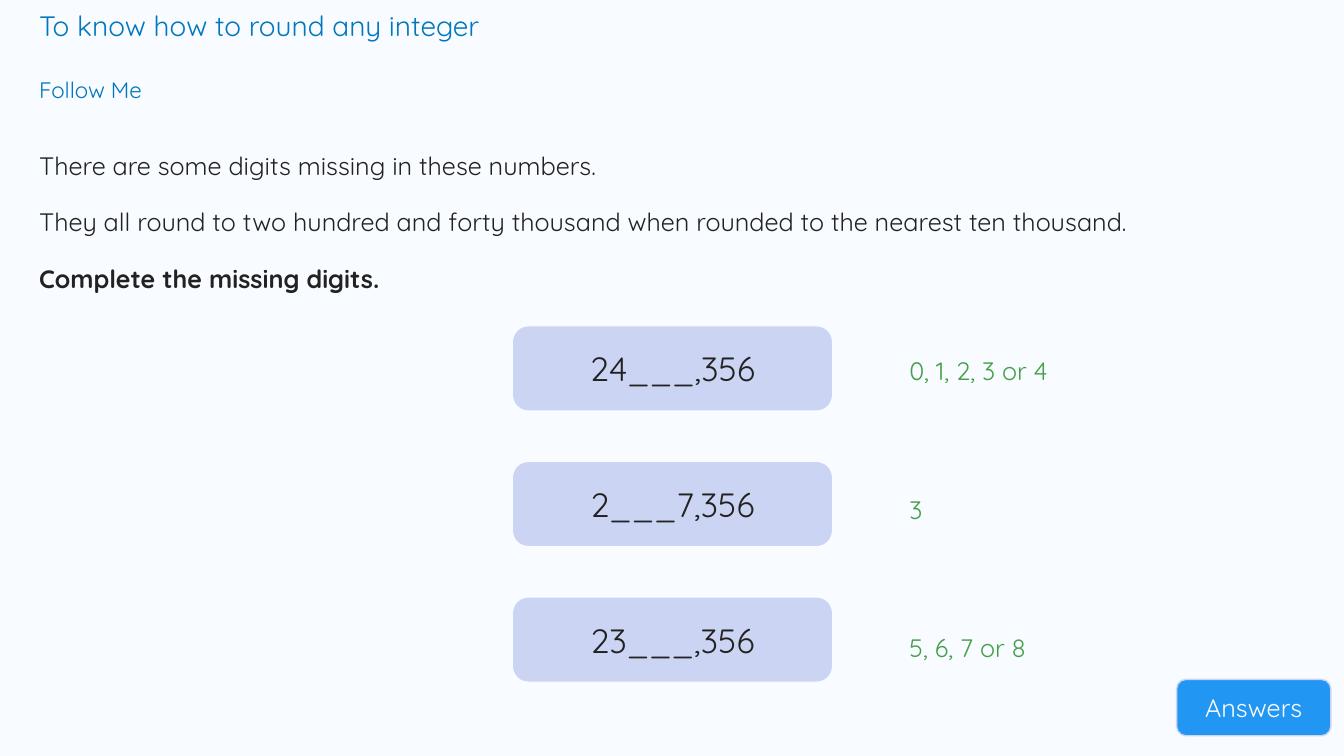
from pptx import Presentation
from pptx.dml.color import RGBColor
from pptx.enum import shapes, text
from pptx.util import Inches, Pt

BACKGROUND = RGBColor(0xF8, 0xFB, 0xFF)
HEADING = RGBColor(0x02, 0x77, 0xBD)
INK = RGBColor(0x22, 0x22, 0x22)
ANSWER = RGBColor(0x43, 0xA0, 0x47)
LAVENDER = RGBColor(0xCC, 0xD4, 0xF4)
BUTTON = RGBColor(0x21, 0x96, 0xF3)
WHITE = RGBColor(0xFF, 0xFF, 0xFF)

deck = Presentation()
deck.slide_width, deck.slide_height = Inches(13.33), Inches(7.5)
page = deck.slides.add_slide(deck.slide_layouts[6])
page.background.fill.solid()
page.background.fill.fore_color.rgb = BACKGROUND


def write(box, lines, size, color, spacing=None):
    frame = box.text_frame
    frame.word_wrap = True
    frame.text = "\n".join(lines)
    for para in frame.paragraphs:
        para.font.name = "Quicksand"
        para.font.size = Pt(size)
        para.font.color.rgb = color
        para.line_spacing = spacing
    return frame


def add_card(left, top, width, height, label, size, color, fill, border):
    card = page.shapes.add_shape(
        shapes.MSO_SHAPE.ROUNDED_RECTANGLE,
        Inches(left), Inches(top), Inches(width), Inches(height))
    card.shadow.inherit = False
    card.fill.solid()
    card.fill.fore_color.rgb = fill
    card.line.color.rgb = LAVENDER
    card.line.width = Pt(border)
    frame = write(card, [label], size, color)
    frame.vertical_anchor = text.MSO_ANCHOR.MIDDLE
    frame.paragraphs[0].alignment = text.PP_ALIGN.CENTER


title = page.shapes.add_textbox(Inches(0.29), Inches(0.04), Inches(12.34), Inches(0.44))
write(title, ["To know how to round any integer"], 20, HEADING)

subtitle = page.shapes.add_textbox(Inches(0.29), Inches(0.71), Inches(2.97), Inches(0.46))
write(subtitle, ["Follow Me"], 16, HEADING)

task = page.shapes.add_textbox(Inches(0.29), Inches(1.29), Inches(12.84), Inches(1.97))
task_lines = write(task, [
    "There are some digits missing in these numbers.",
    "They all round to two hundred and forty thousand when rounded to the nearest ten thousand.",
    "Complete the missing digits.",
], 18, INK, 1.5).paragraphs
for para in task_lines[1:]:
    para.space_before = Pt(8)
task_lines[-1].font.bold = True

questions = [
    ("24___,356", "0, 1, 2, 3 or 4"),
    ("2___7,356", "3"),
    ("23___,356", "5, 6, 7 or 8"),
]
for row, (number, digits) in enumerate(questions):
    add_card(5.11, 3.26 + 1.345 * row, 3.12, 0.79, number, 24, INK, LAVENDER, 3)
    answer = page.shapes.add_textbox(
        Inches(8.92), Inches(3.33 + 1.37 * row), Inches(1.97), Inches(0.5))
    write(answer, [digits], 18, ANSWER, 1.5)

add_card(11.67, 6.74, 1.53, 0.56, "Answers", 18, WHITE, BUTTON, 1)

deck.save("out.pptx")
